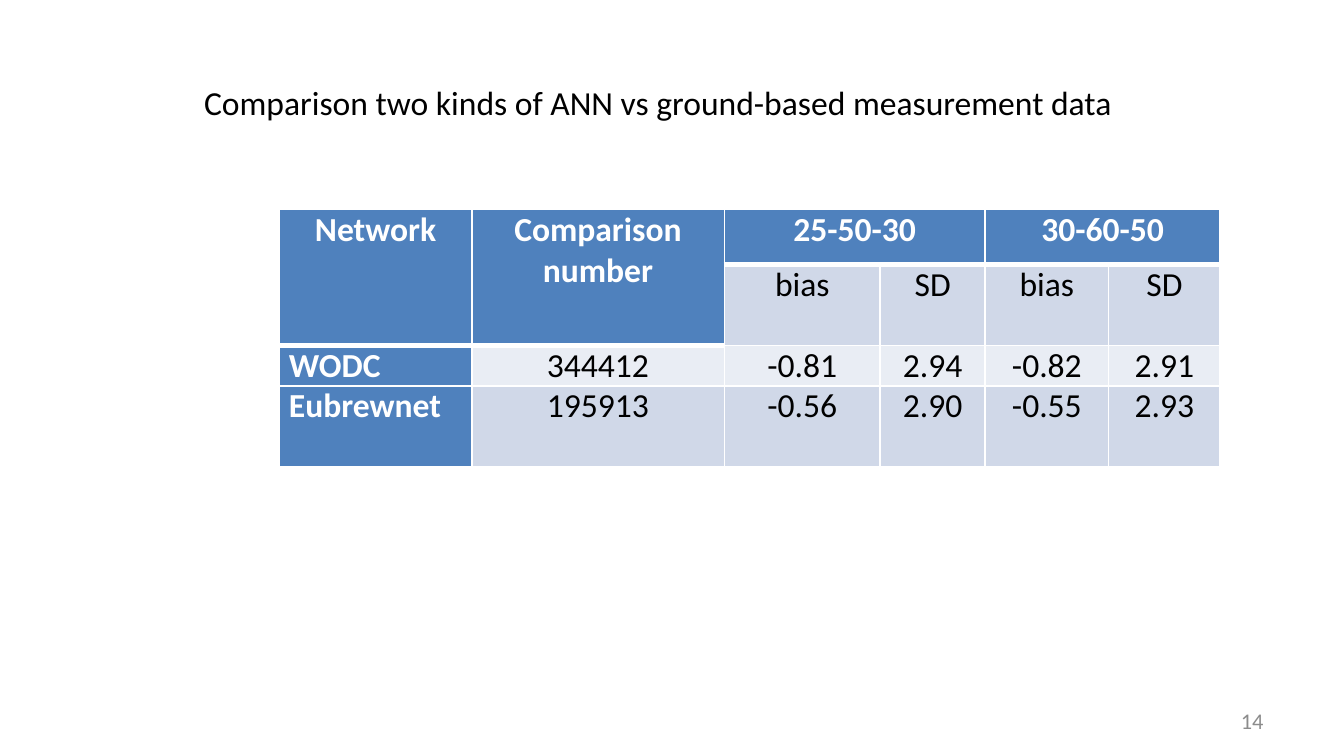
"""Build a slide with a table comparing two ANN layouts with ground-based data."""
from lxml import etree
from pptx import Presentation
from pptx import util as u
from pptx.dml.color import RGBColor
from pptx.enum import text
from pptx.oxml.ns import qn

TITLE = "Comparison two kinds of ANN vs ground-based measurement data"
PAGE = "14"
ROWS = [
    ["Network", "Comparison number", "25-50-30", "", "30-60-50", ""],
    ["", "", "bias", "SD", "bias", "SD"],
    ["WODC", "344412", "-0.81", "2.94", "-0.82", "2.91"],
    ["Eubrewnet", "195913", "-0.56", "2.90", "-0.55", "2.93"],
]
MERGES = [((0, 0), (1, 0)), ((0, 1), (1, 1)), ((0, 2), (0, 3)), ((0, 4), (0, 5))]
COLS = [1.43, 1.88, 1.16, 0.78, 0.92, 0.83]
HEIGHTS = [0.41, 0.6, 0.3, 0.6]
WIDTH = 10
THEME = {
    "font": "Calibri", "body": 18, "small": 12,
    "ink": "000000", "white": "FFFFFF", "grey": "8C8C8C",
    "head": "4F81BD", "bands": ["E9EDF4", "D0D8E8"],
    "thin": 1, "thick": 3,
}
ALIGN = text.PP_ALIGN


def write(tf, words, size=THEME["body"], color=THEME["ink"], bold=False, align=ALIGN.LEFT):
    p = tf.paragraphs[0]
    p.alignment = align
    r = p.add_run()
    r.text = words
    r.font.name = THEME["font"]
    r.font.size = u.Pt(size)
    r.font.bold = bold
    r.font.color.rgb = RGBColor.from_string(color)


def add_label(s, box, words, wrap=True, **fmt):
    tf = s.shapes.add_textbox(*map(u.Inches, box)).text_frame
    tf.word_wrap = wrap
    tf.vertical_anchor = text.MSO_ANCHOR.MIDDLE
    write(tf, words, **fmt)


def set_borders(cell, widths):
    tcPr = cell._tc.get_or_add_tcPr()
    for side, width in zip("LRTB", widths):
        ln = etree.SubElement(tcPr, qn(f"a:ln{side}"), w=str(u.Pt(width)))
        fill = etree.SubElement(ln, qn("a:solidFill"))
        etree.SubElement(fill, qn("a:srgbClr"), val=THEME["white"])


def style_cell(cell, row, col):
    header = row == 0 or (row == 1 and col < 2)
    below_header = row == (2 if col < 2 else 1)
    thin, thick = THEME["thin"], THEME["thick"]
    set_borders(cell, [thin, thin, thick if below_header else thin, thick if header else thin])
    cell.margin_left = cell.margin_right = u.Inches(0.07)
    cell.margin_top = cell.margin_bottom = 0
    strong = header or col == 0
    cell.fill.solid()
    cell.fill.fore_color.rgb = RGBColor.from_string(THEME["head"] if strong else THEME["bands"][row % 2])
    if ROWS[row][col]:
        write(cell.text_frame, ROWS[row][col], bold=strong,
              color=THEME["white" if strong else "ink"],
              align=ALIGN.LEFT if col == 0 and not header else ALIGN.CENTER)


def add_results(s, left, top):
    box = (left, top, sum(COLS), sum(HEIGHTS))
    table = s.shapes.add_table(len(ROWS), len(COLS), *map(u.Inches, box)).table
    for column, width in zip(table.columns, COLS):
        column.width = u.Inches(width)
    for line, height in zip(table.rows, HEIGHTS):
        line.height = u.Inches(height)
    for first, last in MERGES:
        table.cell(*first).merge(table.cell(*last))
    for row in range(len(ROWS)):
        for col in range(len(COLS)):
            style_cell(table.cell(row, col), row, col)


def main():
    prs = Presentation()
    prs.slide_width, prs.slide_height = u.Inches(WIDTH), u.Inches(WIDTH * 9 / 16)
    s = prs.slides.add_slide(prs.slide_layouts[6])
    add_label(s, (7.17, 5.21, 2.33, 0.3), PAGE, size=THEME["small"],
              color=THEME["grey"], align=ALIGN.RIGHT)
    add_label(s, (1.42, 0.56, 7.09, 0.4), TITLE, wrap=False)
    add_results(s, 2.08, 1.56)
    prs.save("out.pptx")


if __name__ == "__main__":
    main()
